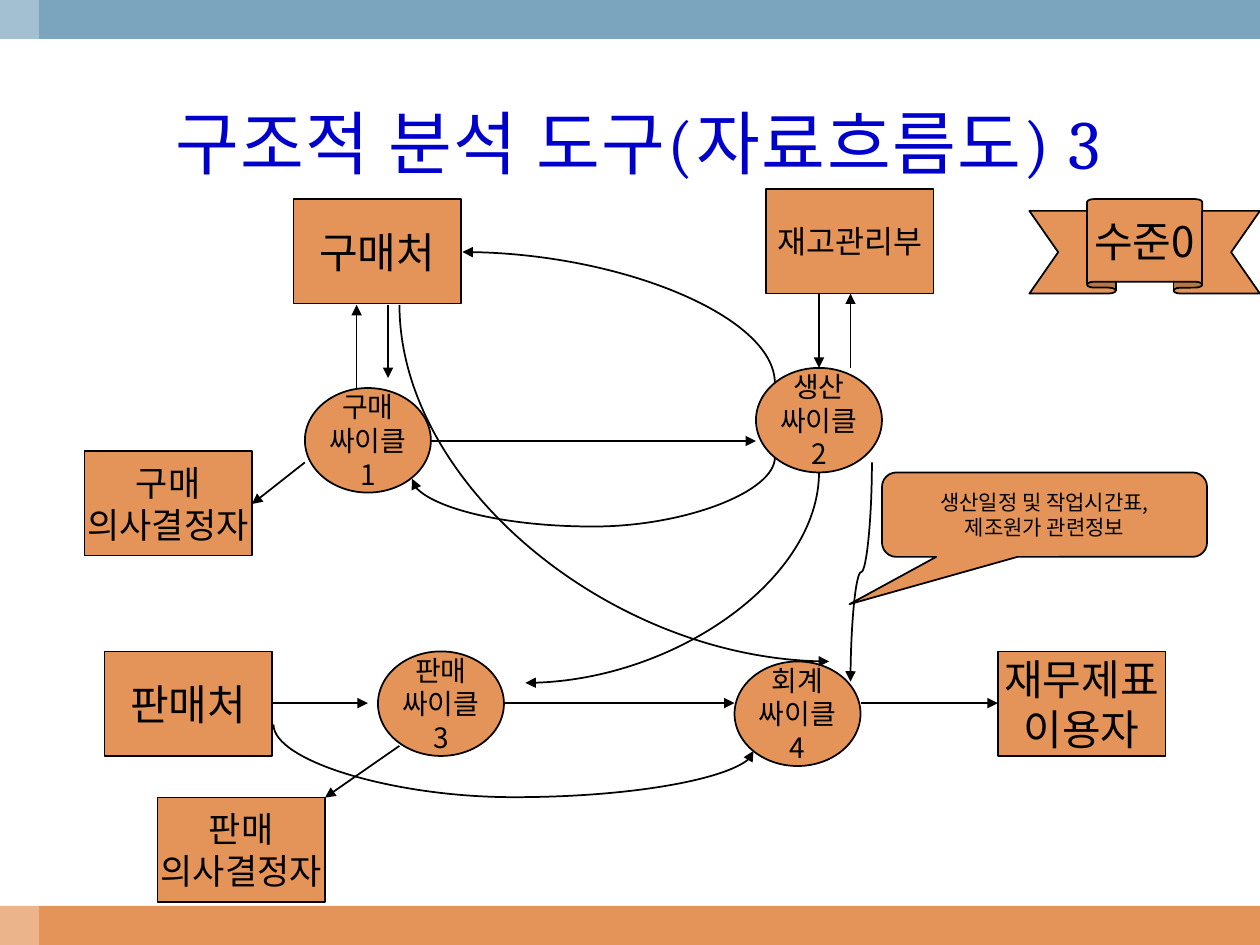
from dataclasses import dataclass

from lxml.etree import SubElement
from pptx import Presentation
from pptx.dml.color import RGBColor
from pptx.enum.shapes import MSO_CONNECTOR, MSO_SHAPE
from pptx.enum.text import MSO_ANCHOR, PP_ALIGN
from pptx.oxml.ns import qn
from pptx.util import Inches, Pt


@dataclass(frozen=True)
class Theme:
    orange: str = "E49458"
    blue: str = "7BA5BE"
    white: str = "FFFFFF"
    black: str = "000000"
    title_blue: str = "0000CC"
    title_font: str = "Cambria"
    body_font: str = "Noto Sans CJK KR"
    title: float = 39.6
    large: int = 24
    medium: int = 20
    label: int = 18
    cycle: int = 16
    note: int = 12


theme = Theme()
deck = Presentation()
deck.slide_width, deck.slide_height = Inches(10), Inches(7.5)
page = deck.slides.add_slide(deck.slide_layouts[6])


def write(box, lines, size, font=theme.body_font, color=theme.black, wrap=False):
    frame = box.text_frame
    for name, value in {"word_wrap": wrap, "vertical_anchor": MSO_ANCHOR.MIDDLE}.items():
        setattr(frame, name, value)
    for index, line in enumerate(lines):
        para = frame.paragraphs[0] if index == 0 else frame.add_paragraph()
        para.alignment = PP_ALIGN.CENTER
        span = para.add_run()
        span.text = line
        for name, value in {"size": Pt(size), "name": font}.items():
            setattr(span.font, name, value)
        span.font.color.rgb = RGBColor.from_string(color)
        SubElement(span.font._element, qn("a:ea"), typeface=theme.body_font)


def add_arrow(kind, left, top, right, bottom):
    arrow = page.shapes.add_connector(
        kind, Inches(left), Inches(top), Inches(right), Inches(bottom))
    arrow.line.width = Pt(1)
    arrow.line.color.rgb = RGBColor.from_string(theme.black)
    SubElement(arrow.line._get_or_add_ln(), qn("a:tailEnd"), type="triangle")
    SubElement(arrow._element.spPr, qn("a:effectLst"))
    return arrow


# Bands along the edges, with a pale strip over their left end
for left, top, width, height, color in [
    (0, 7.19, 10, 0.31, theme.orange),
    (0, 0, 10, 0.31, theme.blue),
    (0, 0, 0.31, 7.5, theme.white),
]:
    band = page.shapes.add_shape(
        MSO_SHAPE.RECTANGLE, Inches(left), Inches(top), Inches(width), Inches(height))
    band.shadow.inherit = False
    band.fill.solid()
    band.fill.fore_color.rgb = RGBColor.from_string(color)
    band.line.fill.background()
strip_color = band._element.spPr.find(qn("a:solidFill"))[0]
SubElement(strip_color, qn("a:alpha"), val="30000")

# Title
title = page.shapes.add_textbox(Inches(0.67), Inches(0.5), Inches(8.92), Inches(1.25))
write(title, ["구조적 분석 도구(자료흐름도) 3 "], theme.title,
      theme.title_font, theme.title_blue, True)
title.text_frame.paragraphs[0].runs[0].font._element.set("spc", "100")

# Cycles, outside parties, level ribbon and callout
cycle = (MSO_SHAPE.OVAL, 1, 0.83, theme.cycle, [])
party = (MSO_SHAPE.RECTANGLE, 1.33, 0.83)
ribbon = (MSO_SHAPE.UP_RIBBON, 1.83, 0.75, theme.large, [0.125, 0.5])
callout = (MSO_SHAPE.ROUNDED_RECTANGULAR_CALLOUT, 2.58, 0.67, theme.note,
           [-0.6, 1.06, 0.17])
nodes = [
    (2.42, 3.08, ["구매", "싸이클", "1"], cycle),
    (3, 5.17, ["판매", "싸이클", "3"], cycle),
    (5.83, 5.25, ["회계", "싸이클", "4"], cycle),
    (6, 2.92, ["생산", "싸이클", "2"], cycle),
    (1.25, 6.33, ["판매", "의사결정자"], (*party, theme.medium, [])),
    (0.67, 3.58, ["구매", "의사결정자"], (*party, theme.medium, [])),
    (0.83, 5.17, ["판매처"], (*party, theme.large, [])),
    (6.08, 1.5, ["재고관리부"], (*party, theme.label, [])),
    (2.33, 1.58, ["구매처"], (*party, theme.large, [])),
    (7.92, 5.17, ["재무제표", "이용자"], (*party, theme.large, [])),
    (8.17, 1.58, ["수준0"], ribbon),
    (7, 3.75, ["생산일정 및 작업시간표,", "제조원가 관련정보"], callout),
]
for left, top, lines, (kind, width, height, size, adjustments) in nodes:
    node = page.shapes.add_shape(
        kind, Inches(left), Inches(top), Inches(width), Inches(height))
    node.shadow.inherit = False
    node.fill.solid()
    node.fill.fore_color.rgb = RGBColor.from_string(theme.orange)
    node.line.color.rgb = RGBColor.from_string(theme.black)
    node.line.width = Pt(1)
    for index, value in enumerate(adjustments):
        node.adjustments[index] = value
    write(node, lines, size)

# Straight flows
for ends in [
    (2.17, 5.58, 2.92, 5.58),
    (4, 5.58, 5.83, 5.58),
    (6.83, 5.58, 7.92, 5.58),
    (3.17, 5.92, 2.58, 6.33),
    (2.17, 5.75, 2.17, 5.75),
    (2.42, 3.67, 2, 4),
    (3.42, 3.5, 6, 3.5),
    (2.83, 3.08, 2.83, 2.42),
    (3.08, 2.42, 3.08, 3),
    (6.5, 2.33, 6.5, 2.92),
    (6.75, 2.92, 6.75, 2.33),
]:
    add_arrow(MSO_CONNECTOR.STRAIGHT, *ends)

# Curved flows leave vertically: a quarter-turned frame about the midpoint
for x1, y1, x2, y2, bend in [
    (2.17, 5.75, 5.98, 5.96, 2.75),
    (6.15, 3.04, 3.67, 2, None),
    (3.17, 2.42, 6.58, 5.25, None),
    (6.5, 3.75, 4.17, 5.42, None),
    (6.15, 3.63, 3.27, 3.8, 3.23),
    (6.92, 3.67, 6.75, 5.41, 0.5),
]:
    middle_x, middle_y = (x1 + x2) / 2, (y1 + y2) / 2
    half_width, half_height = abs(y2 - y1) / 2, abs(x2 - x1) / 2
    curve = add_arrow(MSO_CONNECTOR.CURVE,
                      middle_x - half_width, middle_y - half_height,
                      middle_x + half_width, middle_y + half_height)
    frame = curve._element.spPr.find(qn("a:xfrm"))
    frame.set("rot", str((270 if x2 > x1 else 90) * 60000))
    if x2 > x1 or y2 < y1:
        frame.set("flipH", "1")
    geometry = curve._element.spPr.find(qn("a:prstGeom"))
    if bend is None:
        geometry.set("prst", "curvedConnector2")
    else:
        guides = geometry.find(qn("a:avLst"))
        if guides is None:
            guides = SubElement(geometry, qn("a:avLst"))
        SubElement(guides, qn("a:gd"), name="adj1", fmla=f"val {round(bend * 100000)}")

deck.save("out.pptx")
